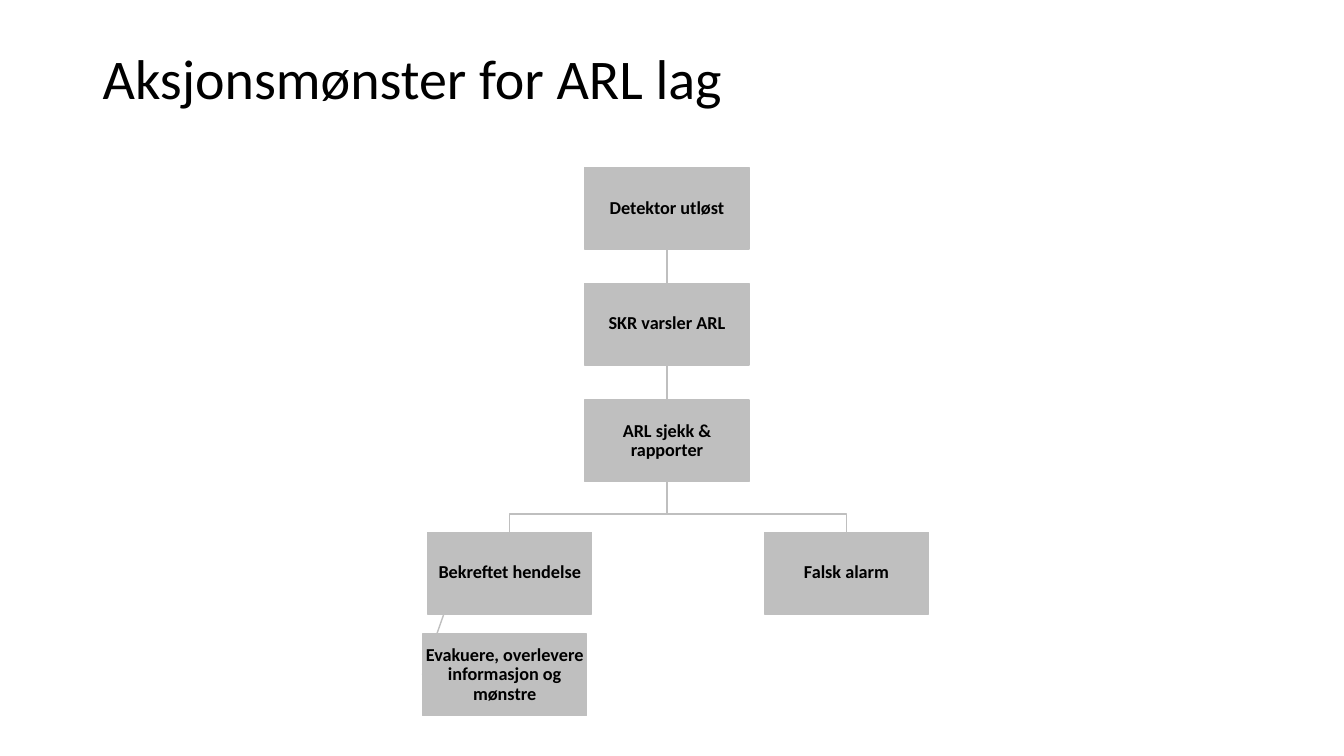
"""Builds a slide with the action pattern of the ARL team as a flow chart."""
from lxml.etree import SubElement
from pptx import Presentation
from pptx.dml.color import RGBColor
from pptx.enum.shapes import MSO_CONNECTOR, MSO_SHAPE
from pptx.enum.text import MSO_ANCHOR, PP_ALIGN
from pptx.oxml.ns import qn
from pptx.util import Inches, Pt

TITLE = "Aksjonsmønster for ARL lag"
STEPS = {
    "detector": ("Detektor utløst", 5.8, 1.66),
    "alert": ("SKR varsler ARL", 5.8, 2.81),
    "check": ("ARL sjekk & rapporter", 5.8, 3.97),
    "false_alarm": ("Falsk alarm", 7.58, 5.28),
    "confirmed": ("Bekreftet hendelse", 4.24, 5.28),
    "evacuate": ("Evakuere, overlevere informasjon og mønstre", 4.19, 6.29),
}
SEQUENCE = [("detector", "alert"), ("alert", "check")]
BRANCHES = [("check", "confirmed"), ("check", "false_alarm")]
COLORS = {"text": "000000", "step": "BFBFBF"}
FONT = "Calibri"
STEP_WIDTH, STEP_HEIGHT = 1.63, 0.81
BRANCH_DROP = 0.32
HANGER_INSET = STEP_WIDTH / 10


def color(name):
    return RGBColor.from_string(COLORS[name])


def write(shape, text, size, bold, align, margins):
    frame = shape.text_frame
    frame.word_wrap = True
    frame.vertical_anchor = MSO_ANCHOR.MIDDLE
    frame.margin_left = frame.margin_right = Inches(margins[0])
    frame.margin_top = frame.margin_bottom = Inches(margins[1])
    frame.text = text
    para = frame.paragraphs[0]
    para.alignment = align
    para.line_spacing = 0.9
    font = para.runs[0].font
    font.name, font.size, font.bold = FONT, Pt(size), bold
    font.color.rgb = color("text")


def style_line(shape):
    shape.line.color.rgb = color("step")
    shape.line.width = Pt(1)


def add_line(slide, start, end):
    points = [Inches(value) for value in (*start, *end)]
    line = slide.shapes.add_connector(MSO_CONNECTOR.STRAIGHT, *points)
    style_line(line)
    SubElement(line._element.spPr, qn("a:effectLst"))
    return line


def add_branch(slide, start, end):
    bend = start[1] + BRANCH_DROP
    corners = [(start[0], bend), (end[0], bend), end]
    builder = slide.shapes.build_freeform(*map(Inches, start))
    builder.add_line_segments([tuple(map(Inches, point)) for point in corners], close=False)
    branch = builder.convert_to_shape()
    branch.fill.background()
    branch.shadow.inherit = False
    style_line(branch)


def add_step(slide, text, left, top):
    box = slide.shapes.add_shape(
        MSO_SHAPE.RECTANGLE, *map(Inches, (left, top, STEP_WIDTH, STEP_HEIGHT)))
    box.shadow.inherit = False
    box.fill.solid()
    box.fill.fore_color.rgb = color("step")
    style_line(box)
    write(box, text, 13, True, PP_ALIGN.CENTER, (0.01, 0.01))
    return box


def top_center(name):
    _, left, top = STEPS[name]
    return left + STEP_WIDTH / 2, top


def bottom_center(name):
    center, top = top_center(name)
    return center, top + STEP_HEIGHT


def main():
    deck = Presentation()
    deck.slide_width, deck.slide_height = Inches(13.33), Inches(7.5)
    slide = deck.slides.add_slide(deck.slide_layouts[6])

    title = slide.shapes.add_textbox(*map(Inches, (0.92, 0.4, 11.5, 0.82)))
    write(title, TITLE, 40, False, PP_ALIGN.LEFT, (0.1, 0.05))

    _, parent_left, parent_top = STEPS["confirmed"]
    _, child_left, child_top = STEPS["evacuate"]
    add_line(slide, (parent_left + HANGER_INSET, parent_top + STEP_HEIGHT),
             (child_left, child_top + STEP_HEIGHT / 2))
    for parent, child in BRANCHES:
        add_branch(slide, bottom_center(parent), top_center(child))
    links = [(add_line(slide, bottom_center(parent), top_center(child)), parent, child)
             for parent, child in SEQUENCE]

    boxes = {name: add_step(slide, *step) for name, step in STEPS.items()}
    for line, parent, child in links:
        line.begin_connect(boxes[parent], 2)
        line.end_connect(boxes[child], 0)

    deck.save("out.pptx")


if __name__ == "__main__":
    main()
